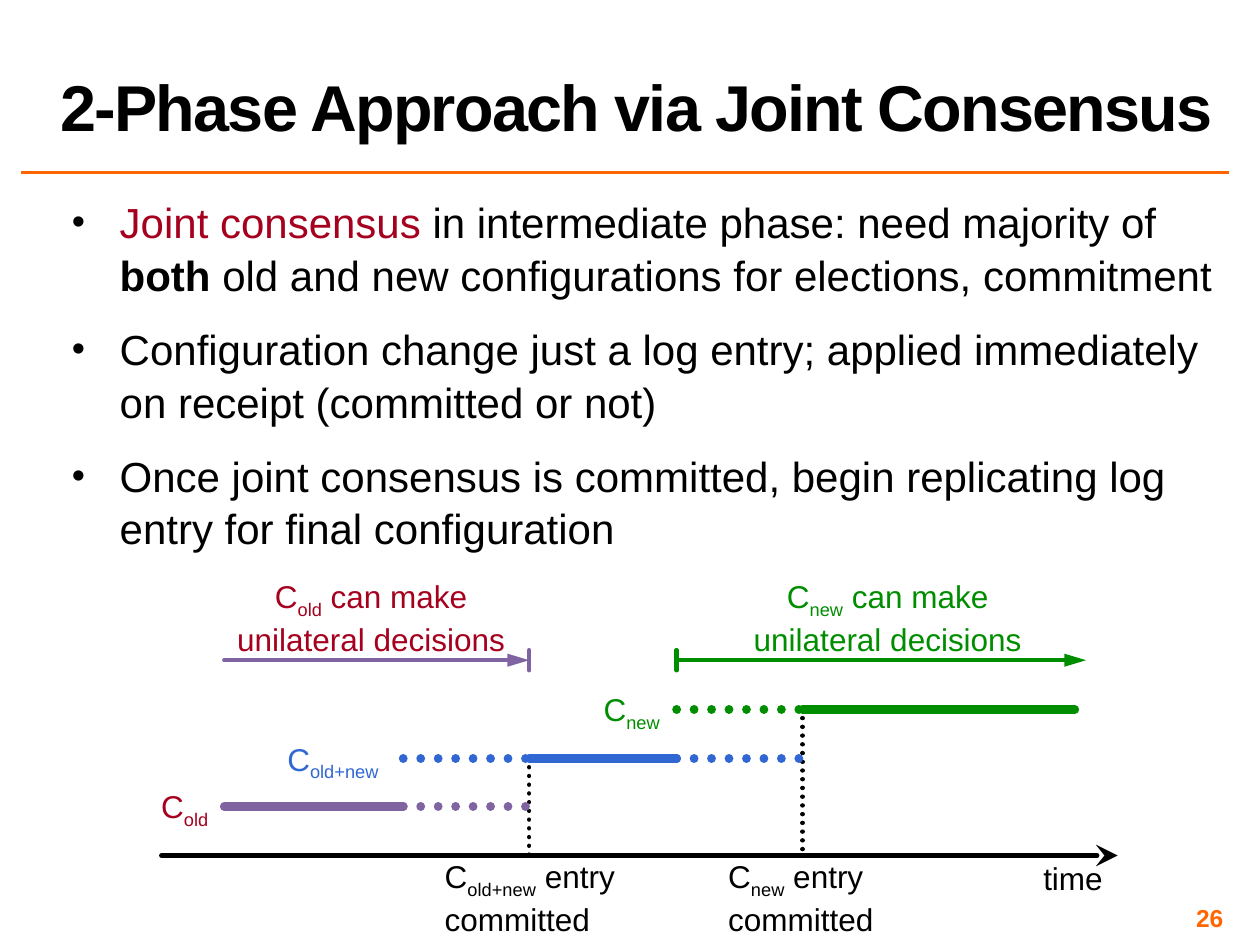
"""Build the slide on the two-phase approach via joint consensus."""
from lxml import etree
from pptx import Presentation
from pptx import util as u
from pptx.dml.color import RGBColor
from pptx.enum import dml, shapes, text
from pptx.oxml.ns import qn

THEME = {
    "font": "Arial",
    "color": {"black": "000000", "orange": "FF6600", "red": "A5001E",
              "blue": "3167D3", "green": "008E00", "purple": "8064A2"},
    "size": {"title": 37, "body": 24, "label": 18, "number": 14},
    "width": {"rule": 2, "thin": 2.5, "bar": 5},
}
LEFT, CENTER, RIGHT = text.PP_ALIGN.LEFT, text.PP_ALIGN.CENTER, text.PP_ALIGN.RIGHT
TOP, MIDDLE, BOTTOM = (text.MSO_ANCHOR.TOP, text.MSO_ANCHOR.MIDDLE,
                       text.MSO_ANCHOR.BOTTOM)

TITLE = "2-Phase Approach via Joint Consensus"
BULLETS = [
    [("Joint consensus ", "red"), ("in intermediate phase: need majority of ",),
     ("both", "black", True),
     (" old and new configurations for elections, commitment",)],
    [("Configuration change just a log entry; applied immediately "
      "on receipt (committed or not)",)],
    [("Once joint consensus is committed, begin replicating log "
      "entry for final configuration",)],
]
PAGE = "26"

LABELS = [
    ((8.28, 6.82, 0.48, 0.3), "black", LEFT, [("time", "", "")]),
    ((3.53, 6.8, 1.44, 0.61), "black", LEFT,
     [("C", "old+new", " entry"), ("committed", "", "")]),
    ((5.78, 6.8, 1.16, 0.61), "black", LEFT,
     [("C", "new", " entry"), ("committed", "", "")]),
    ((1.28, 6.25, 0.4, 0.3), "red", LEFT, [("C", "old", "")]),
    ((2.28, 5.87, 0.81, 0.3), "blue", LEFT, [("C", "old+new", "")]),
    ((4.79, 5.48, 0.49, 0.3), "green", LEFT, [("C", "new", "")]),
    ((1.87, 4.58, 2.15, 0.61), "red", CENTER,
     [("C", "old", " can make"), ("unilateral decisions", "", "")]),
    ((5.97, 4.58, 2.15, 0.61), "green", CENTER,
     [("C", "new", " can make"), ("unilateral decisions", "", "")]),
]

MOMENT = {"start": 1.78, "joint_logged": 3.2, "joint_committed": 4.2,
          "new_logged": 5.37, "new_committed": 6.37, "end": 8.53}
LEVEL = {"decisions": 5.24, "new": 5.63, "joint": 6.02, "old": 6.4, "time": 6.79}
TICK = 0.08
BARS = [
    ("old", "purple", "start", "joint_logged", False),
    ("old", "purple", "joint_logged", "joint_committed", True),
    ("joint", "blue", "joint_logged", "joint_committed", True),
    ("joint", "blue", "joint_committed", "new_logged", False),
    ("joint", "blue", "new_logged", "new_committed", True),
    ("new", "green", "new_logged", "new_committed", True),
    ("new", "green", "new_committed", "end", False),
]
COMMITS = [("joint_committed", "joint"), ("new_committed", "new")]
DECISIONS = [("purple", MOMENT["start"], MOMENT["joint_committed"], "joint_committed"),
             ("green", MOMENT["new_logged"], 8.62, "new_logged")]


def assign(target, values):
    """Set every attribute in values on target."""
    for name, value in values.items():
        setattr(target, name, value)


def place(part, box):
    """Move a part to its left, top, width and height in inches."""
    assign(part, dict(zip(("left", "top", "width", "height"), map(u.Inches, box))))


def add_run(paragraph, words, size, color="black", bold=False, subscript=False):
    """Add one formatted run."""
    run = paragraph.add_run()
    run.text = words
    assign(run.font, {"name": THEME["font"], "size": u.Pt(THEME["size"][size]),
                      "bold": bold})
    run.font.color.rgb = RGBColor.from_string(THEME["color"][color])
    if subscript:
        run.font._element.set("baseline", "-25000")
    return run


def set_frame(frame, inset, anchor=TOP, wrap=True, fit=text.MSO_AUTO_SIZE.NONE):
    """Format a text frame and return its first paragraph."""
    margins = {f"margin_{side}": u.Inches(inset)
               for side in ("left", "right", "top", "bottom")}
    assign(frame, {**margins, "vertical_anchor": anchor, "word_wrap": wrap,
                   "auto_size": fit})
    return frame.paragraphs[0]


def add_line(slide, start, end, color, width="thin", dotted=False, head=None):
    """Draw a straight line, with an optional (kind, width) arrowhead."""
    line = slide.shapes.add_connector(
        shapes.MSO_CONNECTOR.STRAIGHT, *map(u.Inches, (*start, *end)))
    line.line.color.rgb = RGBColor.from_string(THEME["color"][color])
    line.line.width = u.Pt(THEME["width"][width])
    if dotted:
        line.line.dash_style = dml.MSO_LINE.ROUND_DOT
    outline = line.line._get_or_add_ln()
    if width != "rule":
        outline.set("cap", "rnd")
        etree.SubElement(outline, qn("a:round"))
    if head:
        etree.SubElement(outline, qn("a:tailEnd"), type=head[0], w=head[1], len="lg")
    etree.SubElement(line._element.spPr, qn("a:effectLst"))


def add_heading(slide):
    """Fill the title and draw the rule below it."""
    title = slide.shapes.title
    place(title, (0.38, 0.02, 9.62, 1.17))
    paragraph = set_frame(title.text_frame, 0.1, BOTTOM)
    title.text_frame.margin_top = title.text_frame.margin_bottom = u.Inches(0.05)
    assign(paragraph, {"alignment": LEFT, "line_spacing": 0.8})
    add_run(paragraph, TITLE, "title", bold=True).font._element.set("spc", "-100")
    add_line(slide, (0.17, 1.37), (9.75, 1.37), "orange", "rule")


def add_bullets(slide):
    """Fill the body with the bulleted list."""
    body = slide.placeholders[1]
    place(body, (0.47, 1.49, 9.28, 2.83))
    frame = body.text_frame
    set_frame(frame, 0.1)
    frame.margin_top = frame.margin_bottom = u.Inches(0.05)
    for index, pieces in enumerate(BULLETS):
        paragraph = frame.add_paragraph() if index else frame.paragraphs[0]
        assign(paragraph, {"alignment": LEFT, "space_before": u.Pt(12),
                           "line_spacing": 1.05})
        layout = paragraph._p.get_or_add_pPr()
        layout.set("marL", str(u.Inches(0.38)))
        layout.set("indent", str(-u.Inches(0.38)))
        bullet_color = etree.SubElement(layout, qn("a:buClr"))
        etree.SubElement(bullet_color, qn("a:srgbClr"), val=THEME["color"]["black"])
        etree.SubElement(layout, qn("a:buSzPct"), val="90000")
        etree.SubElement(layout, qn("a:buFont"), typeface=THEME["font"])
        etree.SubElement(layout, qn("a:buChar"), char="•")
        for words, *style in pieces:
            add_run(paragraph, words, "body", *style)


def add_label(slide, box, color, alignment, rows):
    """Write a label whose rows are (base, subscript, rest)."""
    label = slide.shapes.add_textbox(*map(u.Inches, box))
    paragraph = set_frame(label.text_frame, 0, wrap=False,
                          fit=text.MSO_AUTO_SIZE.SHAPE_TO_FIT_TEXT)
    paragraph.alignment = alignment
    for index, row in enumerate(rows):
        if index and alignment == CENTER:
            paragraph = label.text_frame.add_paragraph()
            paragraph.alignment = alignment
        elif index:
            paragraph.add_line_break()
        for position, words in enumerate(row):
            if words:
                add_run(paragraph, words, "label", color, subscript=position == 1)


def add_timeline(slide):
    """Draw the time axis, configuration bars, commits and decision spans."""
    axis = LEVEL["time"]
    add_line(slide, (1.28, axis), (8.87, axis), "black", head=("stealth", "lg"))
    for moment, level in COMMITS:
        x = MOMENT[moment]
        add_line(slide, (x, LEVEL[level]), (x, axis), "black", dotted=True)
    for level, color, start, end, dotted in BARS:
        y = LEVEL[level]
        add_line(slide, (MOMENT[start], y), (MOMENT[end], y), color, "bar", dotted)
    y = LEVEL["decisions"]
    for color, start, end, limit in DECISIONS:
        add_line(slide, (start, y), (end, y), color, head=("triangle", "med"))
        x = MOMENT[limit]
        add_line(slide, (x, y - TICK), (x, y + TICK), color)
    for label in LABELS:
        add_label(slide, *label)


def main():
    """Assemble and save the slide."""
    deck = Presentation()
    assign(deck, {"slide_width": u.Inches(10), "slide_height": u.Inches(7.5)})
    slide = deck.slides.add_slide(deck.slide_layouts[1])
    add_heading(slide)
    add_bullets(slide)
    add_timeline(slide)
    number = slide.shapes.add_textbox(*map(u.Inches, (7.42, 7.17, 2.33, 0.23)))
    paragraph = set_frame(number.text_frame, 0.04, MIDDLE)
    paragraph.alignment = RIGHT
    add_run(paragraph, PAGE, "number", "orange", bold=True)
    deck.save("out.pptx")


if __name__ == "__main__":
    main()
